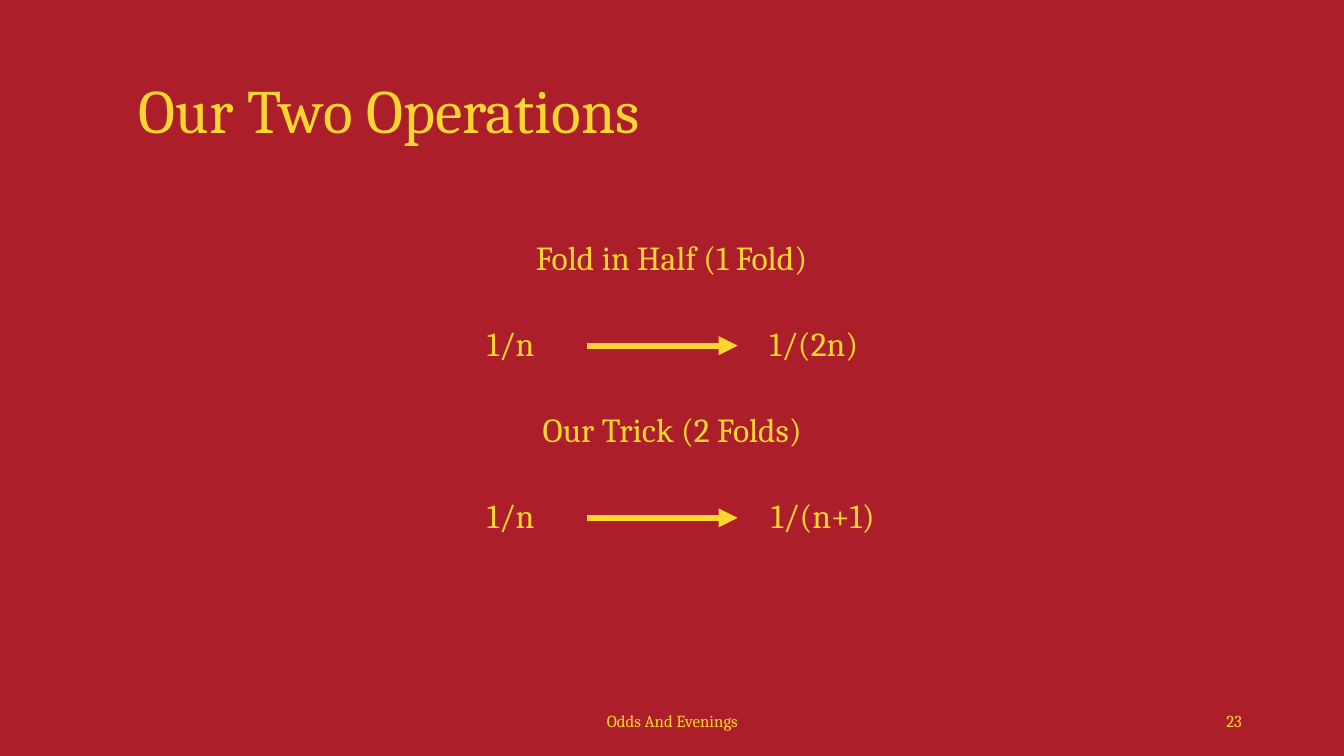
from lxml.etree import SubElement
from pptx import Presentation
from pptx.dml.color import RGBColor
from pptx.enum.shapes import MSO_CONNECTOR as Connector
from pptx.enum.text import MSO_ANCHOR as Anchor, PP_ALIGN as Align
from pptx.oxml.ns import qn
from pptx.util import Cm, Pt

RED = RGBColor(0xAC, 0x1F, 0x2A)
GOLD = RGBColor(0xFE, 0xD6, 0x31)

SIDE_LEFT, SIDE_RIGHT = 1, 3
ROW_TOP, ROW_STEP, ROW_HEIGHT = 4.7, 2.17, 3.68
TERM_LEFT, TERM_WIDTH = 10.95, 3.84
ARROW_END = 18.59
FOOTER_TOP, FOOTER_HEIGHT = 17.65, 1.02


class SlideBuilder:
    font = "Cambria"
    color = GOLD

    def __init__(self, prs, background):
        self.s = prs.slides.add_slide(prs.slide_layouts[6])
        fill = self.s.background.fill
        fill.solid()
        fill.fore_color.rgb = background

    def text(self, text, left, top, width, height, size=24,
             align=Align.CENTER, spacing=0.9):
        sp = self.s.shapes.add_textbox(Cm(left), Cm(top), Cm(width), Cm(height))
        tf = sp.text_frame
        tf.text = text
        tf.word_wrap = True
        tf.vertical_anchor = Anchor.MIDDLE
        p = tf.paragraphs[0]
        p.alignment = align
        p.line_spacing = spacing
        r = p.runs[0]
        r.font.name = self.font
        r.font.size = Pt(size)
        r.font.color.rgb = self.color
        return sp

    def arrow(self, start, end_x, target=None):
        y = start.top + start.height // 2
        line = self.s.shapes.add_connector(
            Connector.STRAIGHT, start.left + start.width, y, Cm(end_x), y)
        line.begin_connect(start, SIDE_RIGHT)
        if target is not None:
            line.end_connect(target, SIDE_LEFT)
        line.line.color.rgb = self.color
        line.line.width = Pt(4.5)
        SubElement(line.line._get_or_add_ln(), qn("a:tailEnd"), type="triangle")
        SubElement(line._element.spPr, qn("a:effectLst"))

    def operation(self, row, heading, left, width, result, result_left):
        heading_top = ROW_TOP + row * ROW_STEP
        formula_top = heading_top + ROW_STEP
        self.text(heading, left, heading_top, width, ROW_HEIGHT)
        term = self.text("1/n", TERM_LEFT, formula_top, TERM_WIDTH, ROW_HEIGHT)
        outcome = self.text(result, result_left, formula_top, TERM_WIDTH, ROW_HEIGHT)
        touches = result_left == ARROW_END
        self.arrow(term, ARROW_END, outcome if touches else None)


def main():
    prs = Presentation()
    prs.slide_width = Cm(33.87)
    prs.slide_height = Cm(19.05)
    slide = SlideBuilder(prs, RED)
    slide.text("Our Two Operations", 3.25, 1.02, 16.23, 3.68, 44, Align.LEFT)
    slide.operation(0, "Fold in Half (1 Fold)", 12.34, 9.17, "1/(2n)", ARROW_END)
    slide.operation(2, "Our Trick (2 Folds)", 13.03, 7.82, "1/(n+1)", 18.82)
    slide.text("Odds And Evenings", 11.23, FOOTER_TOP, 11.43, FOOTER_HEIGHT,
               12, spacing=1.0)
    slide.text("23", 23.93, FOOTER_TOP, 7.62, FOOTER_HEIGHT,
               12, Align.RIGHT, 1.0)
    prs.save("out.pptx")


if __name__ == "__main__":
    main()
